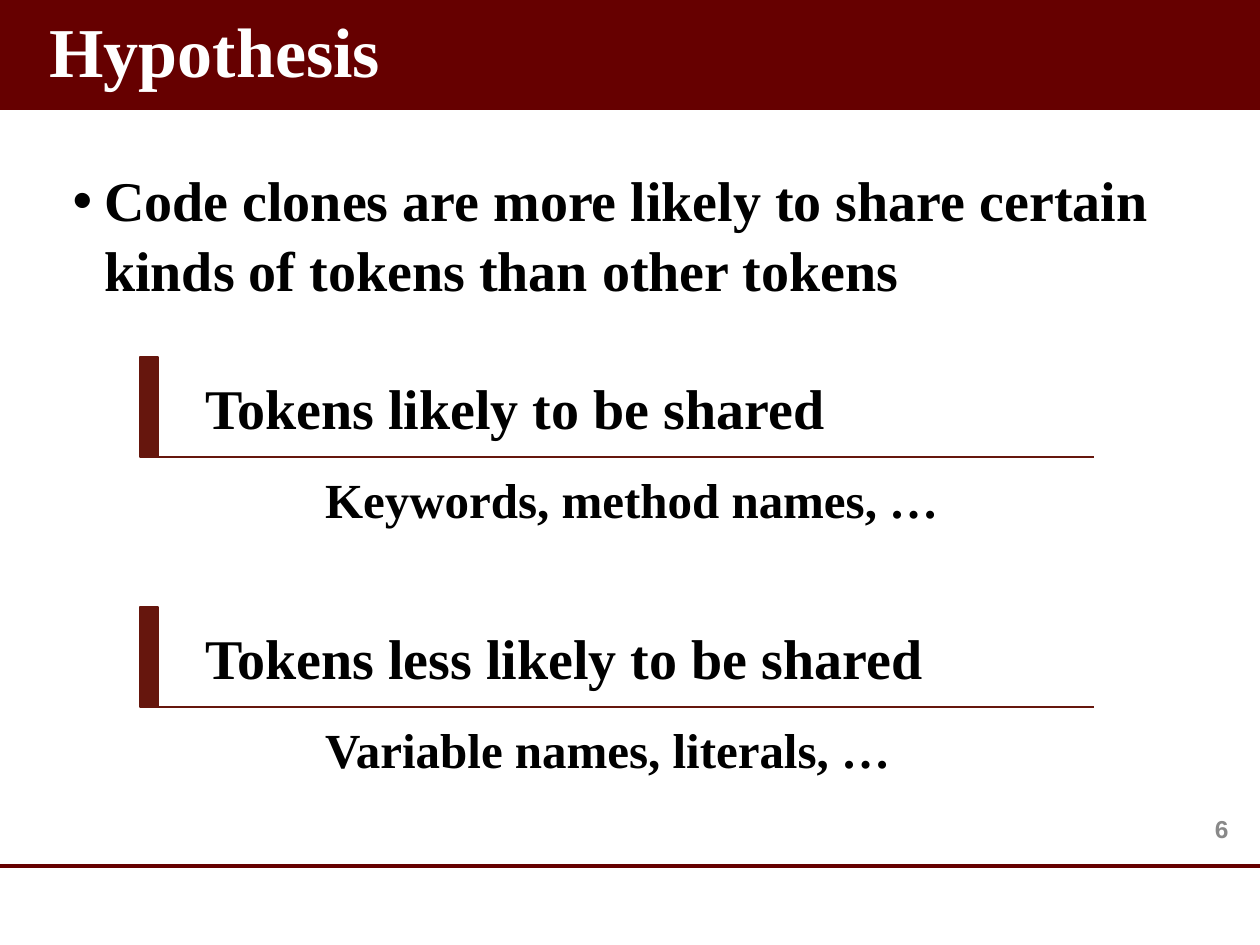
from dataclasses import dataclass

from lxml import etree
from pptx import Presentation
from pptx import util as u
from pptx.dml.color import RGBColor
from pptx.enum import shapes, text
from pptx.oxml.ns import qn

PX = 914400 / 126
SERIF = "Times New Roman"
MAROON, BRICK, GREY = "660000", "66160D", "898989"
BLACK, WHITE = "000000", "FFFFFF"


@dataclass
class TokenGroup:
    top: int
    heading: str
    examples: str


GROUPS = [
    TokenGroup(357, "Tokens likely to be shared", "Keywords, method names, …"),
    TokenGroup(607, "Tokens less likely to be shared", "Variable names, literals, …"),
]


def px(n: int) -> u.Emu:
    return u.Emu(round(n * PX))


def color(value: str) -> RGBColor:
    return RGBColor.from_string(value)


def place(sp, x: int, y: int, w: int, h: int) -> None:
    sp.left, sp.top, sp.width, sp.height = px(x), px(y), px(w), px(h)


def write(sp, words: str, size: int, font=SERIF, fill=BLACK, align=text.PP_ALIGN.LEFT,
          anchor=text.MSO_ANCHOR.MIDDLE, spacing=1.0, bullet=False) -> None:
    tf = sp.text_frame
    tf.word_wrap = True
    tf.auto_size = text.MSO_AUTO_SIZE.NONE
    tf.vertical_anchor = anchor
    p = tf.paragraphs[0]
    p.alignment, p.line_spacing, p.space_before = align, spacing, u.Pt(0)
    if bullet:
        pPr = p._p.get_or_add_pPr()
        pPr.set("marL", str(u.Inches(0.25)))
        pPr.set("indent", str(-u.Inches(0.25)))
        etree.SubElement(pPr, qn("a:buFont"), typeface="Arial")
        etree.SubElement(pPr, qn("a:buChar"), char="•")
    r = p.add_run()
    r.text = words
    r.font.name, r.font.size, r.font.bold = font, u.Pt(size), True
    r.font.color.rgb = color(fill)


def add_bar(s, x: int, y: int, w: int, h: int, fill: str, outlined=False):
    sp = s.shapes.add_shape(shapes.MSO_SHAPE.RECTANGLE, px(x), px(y), px(w), px(h))
    sp.shadow.inherit = False
    sp.fill.solid()
    sp.fill.fore_color.rgb = color(fill)
    if outlined:
        sp.line.color.rgb, sp.line.width = color(fill), u.Pt(1)
    else:
        sp.line.fill.background()
    return sp


def add_rule(s, x1: int, x2: int, y: int, stroke: str, width: float):
    line = s.shapes.add_connector(shapes.MSO_CONNECTOR.STRAIGHT, px(x1), px(y), px(x2), px(y))
    line.line.color.rgb, line.line.width = color(stroke), u.Pt(width)
    etree.SubElement(line._element.spPr, qn("a:effectLst"))
    return line


def add_label(s, x: int, y: int, w: int, h: int, words: str, size: int, **fmt) -> None:
    """Text in a rounded box without fill or outline."""
    sp = s.shapes.add_shape(shapes.MSO_SHAPE.ROUNDED_RECTANGLE, px(x), px(y), px(w), px(h))
    sp.shadow.inherit = False
    sp.fill.background()
    sp.line.fill.background()
    write(sp, words, size, **fmt)


def add_group(s, group: TokenGroup) -> None:
    add_label(s, 188, group.top, 795, 100, group.heading, 32)
    add_label(s, 309, group.top + 102, 795, 79, group.examples, 28, anchor=text.MSO_ANCHOR.TOP)
    add_bar(s, 140, group.top, 18, 100, BRICK, outlined=True)
    add_rule(s, 149, 1094, group.top + 100, BRICK, 1.5)


def main() -> None:
    prs = Presentation()
    prs.slide_width, prs.slide_height = px(1260), px(945)
    s = prs.slides.add_slide(prs.slide_layouts[1])

    band = add_bar(s, 0, 0, 1260, 110, MAROON)
    s.shapes.element.insert(2, band.element)  # behind the title
    add_rule(s, 0, 1260, 866, MAROON, 2.25)

    title, body = s.placeholders
    place(title, 37, 0, 1223, 110)
    write(title, "Hypothesis", 40, fill=WHITE, spacing=0.9)
    place(body, 60, 157, 1140, 678)
    write(body, "Code clones are more likely to share certain kinds of tokens than other tokens",
          32, anchor=text.MSO_ANCHOR.TOP, spacing=1.04, bullet=True)

    for group in GROUPS:
        add_group(s, group)

    number = s.shapes.add_textbox(px(958), px(804), px(283), px(50))
    write(number, "6", 14, font="Arial", fill=GREY, align=text.PP_ALIGN.RIGHT)
    prs.save("out.pptx")


if __name__ == "__main__":
    main()
